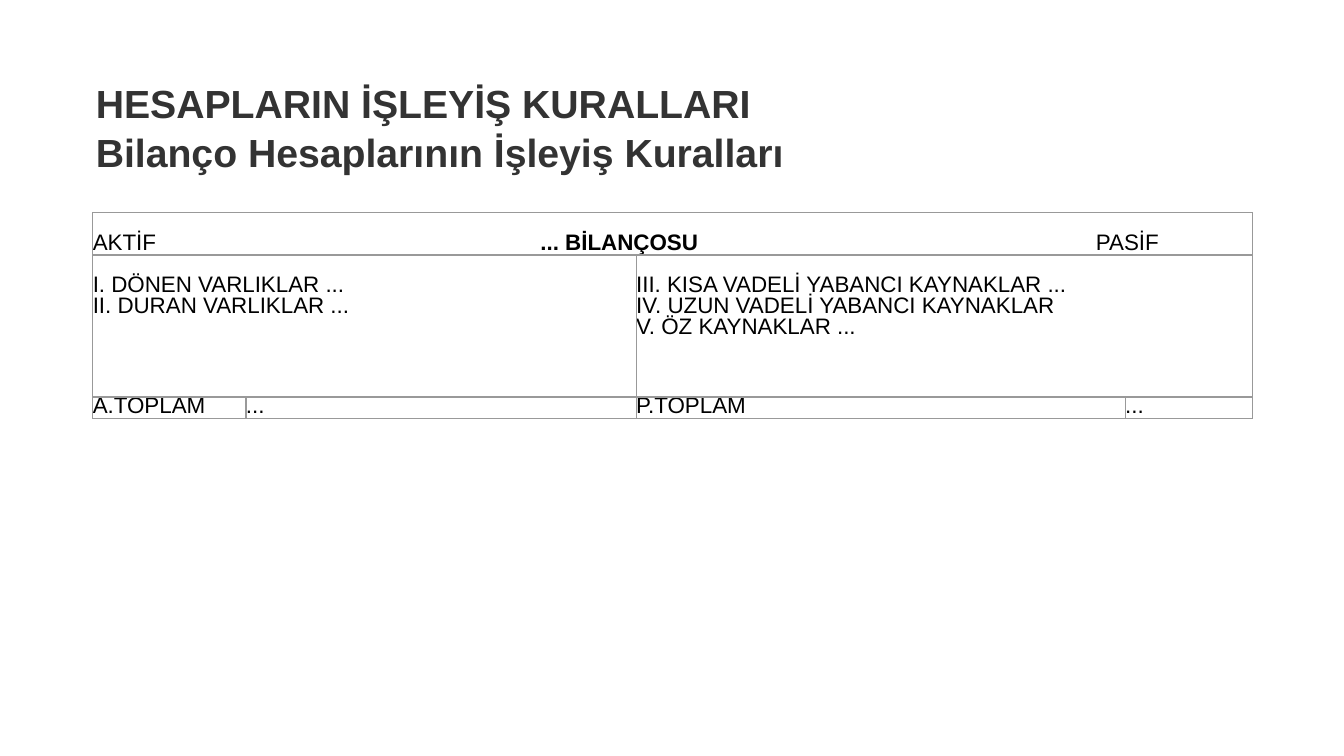
import pptx
import pptx.util
import pptx.dml.color
import pptx.enum.text
import pptx.oxml
import pptx.oxml.ns
import lxml.etree

Inches, Pt = pptx.util.Inches, pptx.util.Pt
Anchor = pptx.enum.text.MSO_ANCHOR

# Content
TITLE = ["HESAPLARIN İŞLEYİŞ KURALLARI", "Bilanço Hesaplarının İşleyiş Kuralları"]
HEADER = [("AKTİF\t", False), ("... BİLANÇOSU\t", True), ("PASİF", False)]
ASSETS = ["I. DÖNEN VARLIKLAR ...", "II. DURAN VARLIKLAR ..."]
LIABILITIES = [
    "III. KISA VADELİ YABANCI KAYNAKLAR ...",
    "IV. UZUN VADELİ YABANCI KAYNAKLAR",
    "V. ÖZ KAYNAKLAR ...",
]
TOTALS = ["A.TOPLAM", "...", "P.TOPLAM", "..."]

# Grid, in inches
COLUMNS = [1.52, 3.87, 4.85, 1.26]
ROWS = [0.42, 1.41, 0.21]
HEADER_TABS = [4.44, 9.95]
LINE = Pt(15)

FONT = "Arial"
TITLE_COLOR = pptx.dml.color.RGBColor(0x33, 0x33, 0x33)
TEXT_COLOR = pptx.dml.color.RGBColor(0, 0, 0)
BORDER_COLOR = pptx.dml.color.RGBColor(0x99, 0x99, 0x99)


def write(text_frame, paragraphs, size, color, spacing):
    """Fill a text frame; each paragraph is a list of (text, bold) runs."""
    for index, runs in enumerate(paragraphs):
        paragraph = text_frame.paragraphs[0] if index == 0 else text_frame.add_paragraph()
        paragraph.alignment = pptx.enum.text.PP_ALIGN.LEFT
        paragraph.line_spacing = spacing
        for text, bold in runs:
            run = paragraph.add_run()
            run.text = text
            run.font.name = FONT
            run.font.size = Pt(size)
            run.font.bold = bold
            run.font.color.rgb = color


def add_borders(cell):
    properties = cell._tc.get_or_add_tcPr()
    for position, side in enumerate(("lnL", "lnR", "lnT", "lnB")):
        properties.insert(position, pptx.oxml.parse_xml(
            f'<a:{side} {pptx.oxml.ns.nsdecls("a")} w="{Pt(1)}"><a:solidFill>'
            f'<a:srgbClr val="{BORDER_COLOR}"/></a:solidFill></a:{side}>'))


def add_tabs(paragraph, positions):
    properties = paragraph._p.get_or_add_pPr()
    tab_list = lxml.etree.SubElement(properties, pptx.oxml.ns.qn("a:tabLst"))
    for position in positions:
        lxml.etree.SubElement(tab_list, pptx.oxml.ns.qn("a:tab"),
                              pos=str(Inches(position)), algn="l")


def fill_cell(cell, paragraphs, anchor, top=0):
    cell.margin_top = top
    cell.vertical_anchor = anchor
    write(cell.text_frame, paragraphs, 16, TEXT_COLOR, LINE)


def main():
    presentation = pptx.Presentation()
    presentation.slide_width, presentation.slide_height = Inches(13.33), Inches(7.5)
    slide = presentation.slides.add_slide(presentation.slide_layouts[5])

    # Title
    title = slide.shapes.title
    title.left, title.top = Inches(0.85), Inches(0.71)
    title.width, title.height = Inches(11.86), Inches(1.04)
    title.text_frame.word_wrap = True
    title.text_frame.vertical_anchor = Anchor.TOP
    write(title.text_frame, [[(line, True)] for line in TITLE], 28, TITLE_COLOR, 1.05)

    # Balance sheet grid
    table = slide.shapes.add_table(
        len(ROWS), len(COLUMNS), Inches(0.92), Inches(2.11),
        Inches(sum(COLUMNS)), Inches(sum(ROWS))).table
    table.first_row = table.horz_banding = False
    for column, width in zip(table.columns, COLUMNS):
        column.width = Inches(width)
    for row, height in zip(table.rows, ROWS):
        row.height = Inches(height)
    for cell in table.iter_cells():
        cell.margin_left = cell.margin_right = cell.margin_top = cell.margin_bottom = 0
        cell.fill.background()
        add_borders(cell)

    # Header across all columns
    header = table.cell(0, 0)
    header.merge(table.cell(0, 3))
    fill_cell(header, [HEADER], Anchor.MIDDLE, LINE)
    add_tabs(header.text_frame.paragraphs[0], HEADER_TABS)

    # Two sides of the balance sheet
    for column, items in ((0, ASSETS), (2, LIABILITIES)):
        cell = table.cell(1, column)
        cell.merge(table.cell(1, column + 1))
        fill_cell(cell, [[(item, False)] for item in items], Anchor.TOP, LINE)

    # Totals
    for column, text in enumerate(TOTALS):
        fill_cell(table.cell(2, column), [[(text, False)]], Anchor.MIDDLE)

    presentation.save("out.pptx")


if __name__ == "__main__":
    main()
